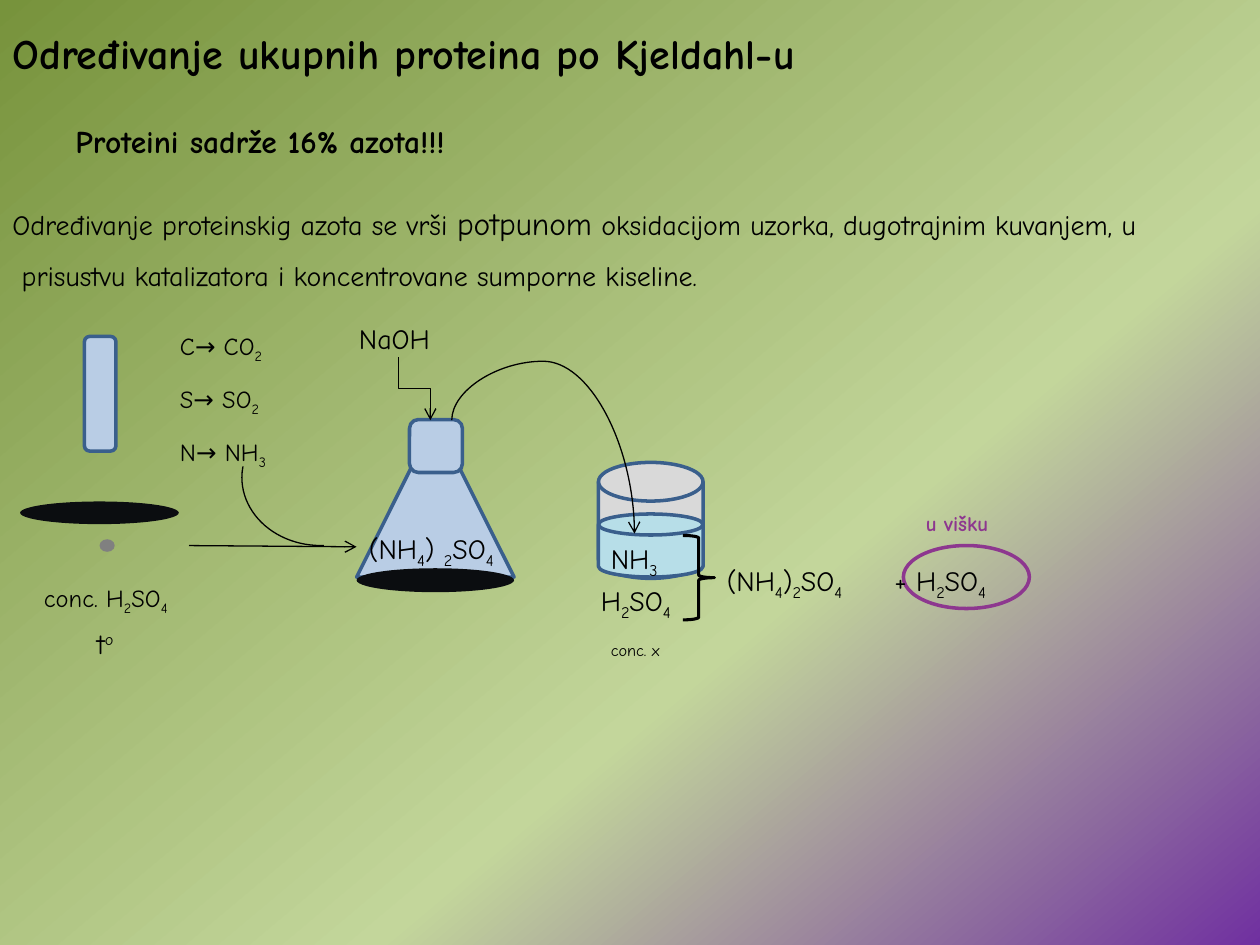
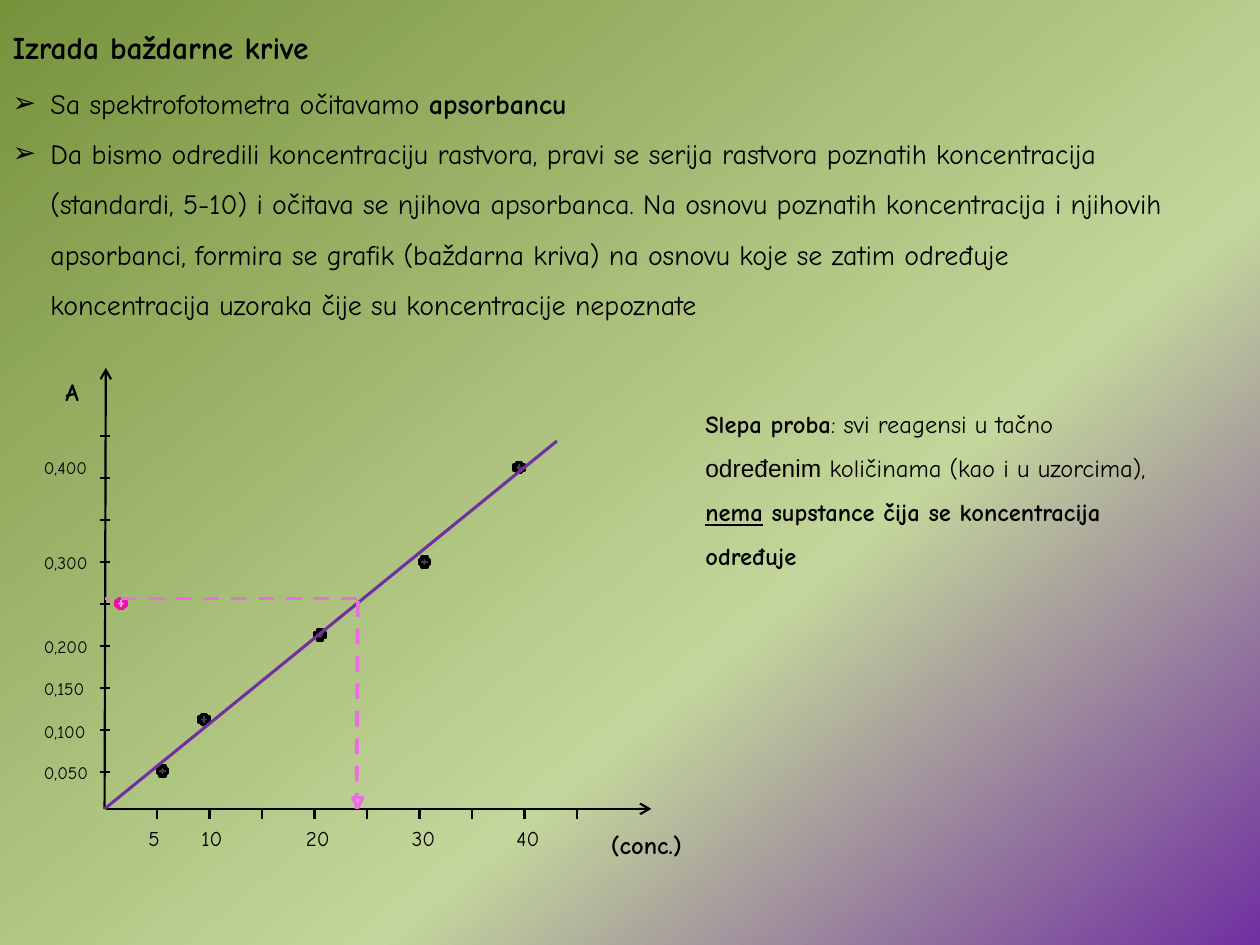
import copy

import lxml.etree
import pptx
import pptx.dml.color
import pptx.enum.dml
import pptx.enum.shapes
import pptx.enum.text
import pptx.oxml.ns
import pptx.util

Inches = pptx.util.Inches
Pt = pptx.util.Pt
qn = pptx.oxml.ns.qn
hex_color = pptx.dml.color.RGBColor.from_string
SHAPE = pptx.enum.shapes.MSO_SHAPE
CONNECTOR = pptx.enum.shapes.MSO_CONNECTOR

FONT = "Comic Neue"
BLACK = "000000"
GLASS = "B9CDE5"
GLASS_EDGE = "3A5F8C"
PURPLE = "7030A0"
VIOLET = "8D378F"
PINK = "E86EE2"
PALE_PINK = "F0A2EC"


def write_text(shape, box, lines, size, bold=False, color=BLACK, spacing=1.0,
               wrap=False, baseline=-25000):
    """Place shape and fill it; "|" starts a new run, "_" shifts the next character by baseline."""
    shape.left, shape.top, shape.width, shape.height = map(Inches, box)
    frame = shape.text_frame
    frame.word_wrap = wrap
    frame.auto_size = pptx.enum.text.MSO_AUTO_SIZE.SHAPE_TO_FIT_TEXT
    frame.vertical_anchor = pptx.enum.text.MSO_ANCHOR.TOP
    for number, line in enumerate(lines):
        paragraph = frame.add_paragraph() if number else frame.paragraphs[0]
        paragraph.alignment = pptx.enum.text.PP_ALIGN.LEFT
        paragraph.line_spacing = spacing
        paragraph.space_before = Pt(0)
        paragraph.font.name = FONT
        paragraph.font.size = Pt(size)
        paragraph.font.bold = bold
        paragraph.font.color.rgb = hex_color(color)
        for part in line.split("|"):
            plain, *shifted = part.split("_")
            paragraph.add_run().text = plain
            for piece in shifted:
                run = paragraph.add_run()
                run.text = piece[0]
                run._r.get_or_add_rPr().set("baseline", str(baseline))
                if piece[1:]:
                    paragraph.add_run().text = piece[1:]
    return frame


def style(item, line=None, width=2, fill=None, dash=False, arrow=False):
    """Set line, fill and arrowhead of a shape or connector, without shadow."""
    if hasattr(item, "fill"):
        if fill:
            item.fill.solid()
            item.fill.fore_color.rgb = hex_color(fill)
        else:
            item.fill.background()
    if line:
        item.line.color.rgb = hex_color(line)
        item.line.width = Pt(width)
    else:
        item.line.fill.background()
    if dash:
        item.line.dash_style = pptx.enum.dml.MSO_LINE.DASH
    if arrow:
        line_element = item._element.spPr.find(qn("a:ln"))
        lxml.etree.SubElement(line_element, qn("a:tailEnd"), type="arrow")
    lxml.etree.SubElement(item._element.spPr, qn("a:effectLst"))


presentation = pptx.Presentation()
presentation.slide_width = Inches(10)
presentation.slide_height = Inches(7.5)

# Shared gradient background
master = presentation.slide_master
background = master.background.fill
background.gradient()
background.gradient_angle = 130
stop_list = next(master._element.iter(qn("a:gsLst")))
stop_list.append(copy.deepcopy(stop_list[-1]))
gradient = [(0, PURPLE), (0.37, "C3D69B"), (1, "77933C")]
for stop, (position, color) in zip(background.gradient_stops, gradient):
    stop.position = position
    stop.color.rgb = hex_color(color)

# Slide 1: Kjeldahl method
slide = presentation.slides.add_slide(presentation.slide_layouts[5])
shapes = slide.shapes
write_text(shapes.title, (0, 0.17, 7.28, 0.51),
           ["Određivanje ukupnih proteina po Kjeldahl-u"], 24, bold=True)
write_text(shapes.add_textbox(0, 0, 0, 0), (0.5, 0.92, 3.62, 0.4),
           ["Proteini sadrže 16% azota!!!"], 18, bold=True)
intro = write_text(
    shapes.add_textbox(0, 0, 0, 0), (0, 1.42, 10.01, 0.96),
    ["Određivanje proteinskig azota se vrši |potpunom| oksidacijom uzorka, dugotrajnim kuvanjem, u",
     " prisustvu katalizatora i koncentrovane sumporne kiseline."], 16, spacing=1.5)
intro.paragraphs[0].runs[1].font.size = Pt(18)

# Flask, test tube with burner, beaker
for kind, box, fill, line in [
    (SHAPE.FLOWCHART_EXTRACT, (2.83, 3.33, 1.25, 1.25), GLASS, GLASS_EDGE),
    (SHAPE.OVAL, (2.83, 4.51, 1.25, 0.19), "0B0D10", None),
    (SHAPE.ROUNDED_RECTANGLE, (3.25, 3.33, 0.42, 0.42), GLASS, GLASS_EDGE),
    (SHAPE.ROUNDED_RECTANGLE, (0.67, 2.67, 0.25, 0.91), GLASS, GLASS_EDGE),
    (SHAPE.OVAL, (0.79, 4.28, 0.12, 0.1), "808080", None),
    (SHAPE.OVAL, (0.16, 3.98, 1.26, 0.18), "0B0D10", None),
    (SHAPE.FLOWCHART_MAGNETIC_DISK, (4.75, 3.67, 0.83, 0.92), "D9D9D9", GLASS_EDGE),
    (SHAPE.FLOWCHART_MAGNETIC_DISK, (4.75, 4.08, 0.83, 0.5), "B7DEE8", GLASS_EDGE),
    (SHAPE.OVAL, (7.17, 4.33, 1, 0.5), None, VIOLET),
]:
    style(shapes.add_shape(kind, *map(Inches, box)), line, fill=fill)

brace = shapes.add_shape(SHAPE.RIGHT_BRACE, *map(Inches, (5.42, 4.25, 0.25, 0.67)))
style(brace, BLACK, 1.75)
ammonia_arc = shapes.add_shape(SHAPE.ARC, *map(Inches, (1.92, 3.25, 1.25, 1.08)))
ammonia_arc.adjustments[0] = 52.41
ammonia_arc.adjustments[1] = 112.9
style(ammonia_arc, BLACK, 0.75)

flask_arrow = shapes.add_connector(CONNECTOR.STRAIGHT, *map(Inches, (1.5, 4.33, 2.83, 4.34)))
base_arrow = shapes.add_connector(CONNECTOR.ELBOW, *map(Inches, (3.54, 2.96, 3.04, 3.21)))
gas_arrow = shapes.add_connector(CONNECTOR.CURVE, *map(Inches, (4.76, 3.06, 3.86, 4.51)))
for arrow in (flask_arrow, base_arrow, gas_arrow):
    style(arrow, BLACK, 0.75, arrow=True)
for arrow in (base_arrow, gas_arrow):
    arrow._element.spPr.find(qn("a:xfrm")).set("rot", str(270 * 60000))
adjust_list = next(gas_arrow._element.iter(qn("a:avLst")))
lxml.etree.SubElement(adjust_list, qn("a:gd"), name="adj1", fmla="val -52000")

for box, text, size in [
    ((0.25, 4.58, 1.32, 0.34), "conc. H_2SO_4", 14),
    ((1.33, 2.58, 0.93, 0.34), "C→ CO_2", 14),
    ((1.33, 3, 0.97, 0.34), "S→ SO_2", 14),
    ((1.33, 3.42, 1, 0.34), "N→ NH_3", 14),
    ((2.83, 4.17, 1.37, 0.37), "(NH_4) _2SO_4", 16),
    ((2.75, 2.5, 0.85, 0.37), "NaOH", 16),
    ((4.67, 4.58, 0.89, 0.37), "H_2SO_4", 16),
    ((4.75, 5.03, 0.6, 0.25), "conc. x", 9.3),
    ((4.75, 4.25, 0.83, 0.37), "NH_3", 16),
    ((5.67, 4.42, 1.33, 0.37), "(NH_4)_2SO_4", 16),
    ((7, 4.42, 1.07, 0.37), "+ H_2SO_4", 16),
]:
    write_text(shapes.add_textbox(0, 0, 0, 0), box, [text], size)
write_text(shapes.add_textbox(0, 0, 0, 0), (7.25, 4, 0.76, 0.3), ["u višku"], 12,
           bold=True, color=VIOLET)
write_text(shapes.add_textbox(0, 0, 0, 0), (0.67, 4.92, 0.39, 0.37), ["t_o"], 16,
           baseline=30000)

# Slide 2: calibration curve
slide = presentation.slides.add_slide(presentation.slide_layouts[1])
shapes = slide.shapes
write_text(shapes.title, (0, 0.17, 2.94, 0.4), ["Izrada baždarne krive"], 18, bold=True)
steps = write_text(
    slide.placeholders[1], (0, 0.5, 10.17, 2.12),
    ["Sa spektrofotometra očitavamo |apsorbancu",
     "Da bismo odredili koncentraciju rastvora, pravi se serija rastvora poznatih koncentracija",
     "(standardi, 5-10) i očitava se njihova apsorbanca. Na osnovu poznatih koncentracija i njihovih",
     "apsorbanci, formira se grafik (baždarna kriva) na osnovu koje se zatim određuje",
     "koncentracija uzoraka čije su koncentracije nepoznate"], 16, spacing=1.5, wrap=True)
steps.paragraphs[0].runs[1].font.bold = True
for number, paragraph in enumerate(steps.paragraphs):
    properties = paragraph._p.get_or_add_pPr()
    bulleted = number < 2
    properties.set("marL", str(Inches(0.3)))
    properties.set("indent", str(Inches(-0.3 if bulleted else 0)))
    bullet = lxml.etree.Element(qn("a:buChar" if bulleted else "a:buNone"))
    if bulleted:
        bullet.set("char", "➢")
    properties.find(qn("a:defRPr")).addprevious(bullet)

blank_test = write_text(
    shapes.add_textbox(0, 0, 0, 0), (5.5, 3.08, 3.84, 1.51),
    ["Slepa proba|: svi reagensi u tačno",
     "određenim| količinama (kao i u uzorcima),",
     "nema| supstance čija se koncentracija",
     "određuje"], 14, spacing=1.5)
first, second, third, fourth = blank_test.paragraphs
first.runs[0].font.bold = True
second.runs[0].font.name = "Arial"
third.font.bold = fourth.font.bold = True
third.runs[0].font.underline = True

# Axes with ticks and labels
ORIGIN_X, ORIGIN_Y = 0.83, 6.42
axes = [(ORIGIN_X, ORIGIN_Y, 5.17, ORIGIN_Y), (ORIGIN_X, ORIGIN_Y, 0.84, 2.92)]
x_ticks = [ORIGIN_X + 5 / 12 * step for step in range(1, 10)]
y_ticks = [6.13 - step / 3 for step in range(9)]
ticks = [(x, ORIGIN_Y, x, 6.5) for x in x_ticks] + [(0.79, y, 0.87, y) for y in y_ticks]
for ends in axes + ticks:
    connector = shapes.add_connector(CONNECTOR.STRAIGHT, *map(Inches, ends))
    style(connector, BLACK, 1.25, arrow=ends in axes)

write_text(shapes.add_textbox(0, 0, 0, 0), (4.75, 6.42, 0.84, 0.41), ["(conc.)"], 14,
           bold=True, spacing=1.5)
write_text(shapes.add_textbox(0, 0, 0, 0), (0.42, 2.83, 0.35, 0.41), ["A"], 14,
           bold=True, spacing=1.5)
for left, width, text in [(1.08, 0.31, "5"), (1.5, 0.38, "10"), (2.33, 0.41, "20"),
                          (3.17, 0.41, "30"), (4, 0.41, "40")]:
    write_text(shapes.add_textbox(0, 0, 0, 0), (left, 6.5, width, 0.3), [text], 12)
for top, text in [(6, "0,050"), (5.67, "0,100"), (5.33, "0,150"), (5, "0,200"),
                  (4.33, "0,300"), (3.58, "0,400")]:
    write_text(shapes.add_textbox(0, 0, 0, 0), (0.25, top, 0.58, 0.27), [text], 10, wrap=True)

# Standards, fitted line and the unknown sample
MARK = 0.08
standards = [(4.08, 3.67), (3.33, 4.42), (2.5, 5), (1.58, 5.67), (1.25, 6.08)]
for left, top in standards:
    mark = shapes.add_shape(SHAPE.CROSS, *map(Inches, (left, top, MARK, MARK)))
    style(mark, BLACK, fill="404040")
fitted_line = shapes.add_connector(CONNECTOR.STRAIGHT,
                                   *map(Inches, (4.42, 3.5, ORIGIN_X, ORIGIN_Y)))
style(fitted_line, PURPLE, 1.75)
sample = shapes.add_shape(SHAPE.CROSS, *map(Inches, (0.92, 4.75, MARK, MARK)))
style(sample, "F50BA7", fill=PALE_PINK)
for ends in [(2.83, 4.75, ORIGIN_X, 4.75), (2.83, ORIGIN_Y, 2.84, 4.75)]:
    style(shapes.add_connector(CONNECTOR.STRAIGHT, *map(Inches, ends)), PINK, 2.25, dash=True)
reading = shapes.add_shape(SHAPE.FLOWCHART_MERGE, *map(Inches, (2.8, 6.33, MARK, MARK)))
style(reading, PINK, fill=PALE_PINK)

presentation.save("out.pptx")
